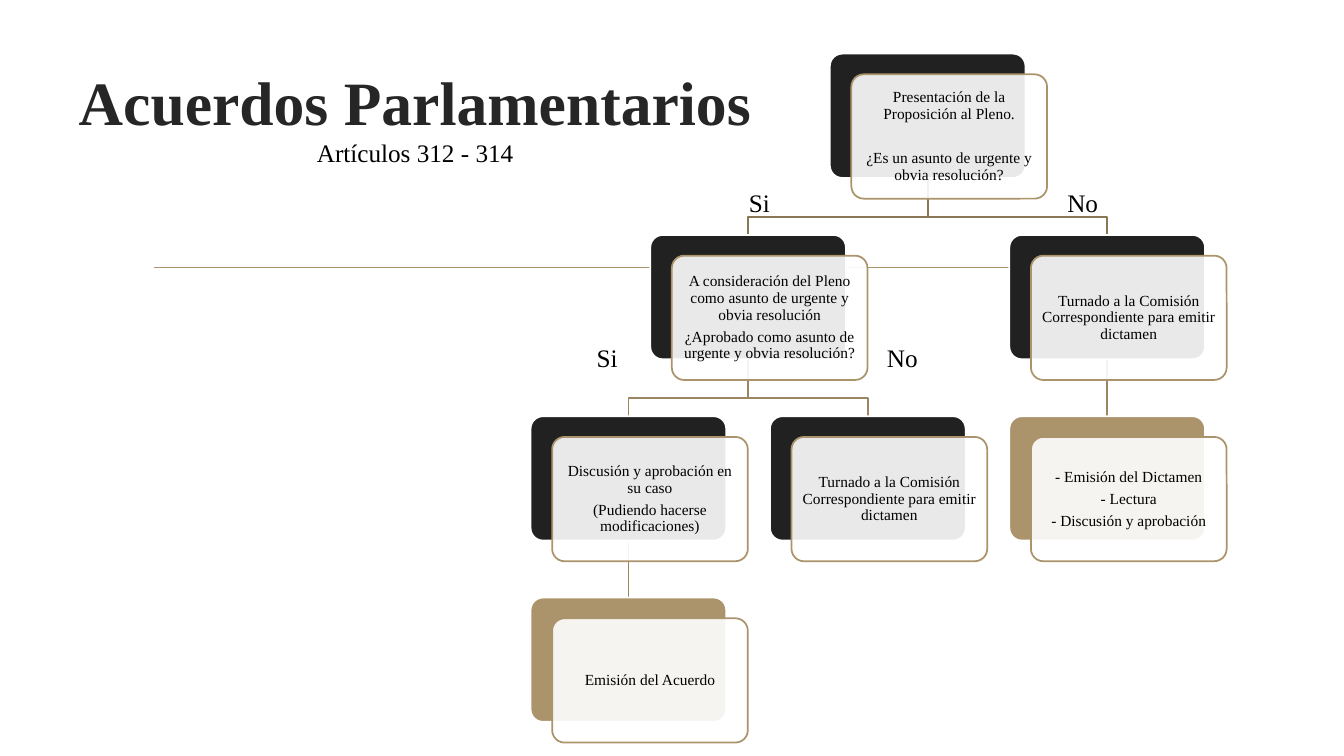
from lxml.etree import SubElement
from pptx import Presentation
from pptx.dml.color import RGBColor
from pptx.enum.shapes import MSO_CONNECTOR as CONNECTOR, MSO_SHAPE as SHAPE
from pptx.enum.text import MSO_ANCHOR as ANCHOR, PP_ALIGN as ALIGN
from pptx.oxml.ns import qn
from pptx.util import Pt

COLORS = {
    "black": "000000", "title": "262626", "white": "FFFFFF", "dark": "212121",
    "gold": "AB946B", "branch_top": "897756", "branch": "9B8661",
}
FONT = "Times New Roman"
LINE_WIDTH = Pt(1.25)
CARD_WIDTH, CARD_HEIGHT = 139.8, 88.8
FRONT_SHIFT_X, FRONT_SHIFT_Y = 15.4, 14.8
FIRST_LEFT, FIRST_TOP = 379, 38.3
COLUMN_STEP, ROW_STEP = 85.5, 129.5
ELBOW_RISE = 13


def write(shape, lines, size=11, color="black", bold=False, align=ALIGN.CENTER,
          anchor=ANCHOR.MIDDLE, spacing=1.0, after=0, inset=None):
    """Fill a shape with one formatted paragraph per line."""
    frame = shape.text_frame
    frame.word_wrap = True
    frame.vertical_anchor = anchor
    if inset is not None:
        frame.margin_left = frame.margin_right = Pt(inset)
        frame.margin_top = frame.margin_bottom = Pt(inset)
    for index, line in enumerate(lines):
        paragraph = frame.paragraphs[0] if index == 0 else frame.add_paragraph()
        paragraph.alignment = align
        paragraph.line_spacing = spacing
        paragraph.space_after = Pt(after)
        run = paragraph.add_run()
        run.text = line
        run.font.name = FONT
        run.font.size = Pt(size)
        run.font.bold = bold
        run.font.color.rgb = RGBColor.from_string(COLORS[color])
    return frame


def add_line(points, color):
    """Draw a straight or bent line through points given in pt."""
    if len(points) == 2:
        (x1, y1), (x2, y2) = points
        line = slide.shapes.add_connector(
            CONNECTOR.STRAIGHT, Pt(x1), Pt(y1), Pt(x2), Pt(y2))
        SubElement(line._element.spPr, qn("a:effectLst"))
    else:
        corners = [(Pt(x), Pt(y)) for x, y in points]
        builder = slide.shapes.build_freeform(*corners[0])
        builder.add_line_segments(corners[1:], close=False)
        line = builder.convert_to_shape()
        line.fill.background()
        line.shadow.inherit = False
    line.line.color.rgb = RGBColor.from_string(COLORS[color])
    line.line.width = LINE_WIDTH


presentation = Presentation()
presentation.slide_width, presentation.slide_height = Pt(960), Pt(540)
slide = presentation.slides.add_slide(presentation.slide_layouts[6])

# Rule and title
add_line([(110.2, 191), (850.3, 191)], "gold")
title = slide.shapes.add_textbox(Pt(-81.4), Pt(31), Pt(756), Pt(103))
title_frame = write(title, ["Acuerdos Parlamentarios", "Artículos 312 - 314"],
                    size=44, color="title", bold=True)
subtitle_font = title_frame.paragraphs[1].runs[0].font
subtitle_font.size = Pt(18)
subtitle_font.bold = False
subtitle_font.color.rgb = RGBColor.from_string(COLORS["black"])

# Steps of the procedure: column, row, back card colour, lines
referral = ["Turnado a la Comisión Correspondiente para emitir dictamen"]
steps = {
    "proposal": (2.5, 0, "dark", ["Presentación de la Proposición al Pleno.",
                                  "¿Es un asunto de urgente y obvia resolución?"]),
    "plenary": (1, 1, "dark", [
        "A consideración del Pleno como asunto de urgente y obvia resolución",
        "¿Aprobado como asunto de urgente y obvia resolución?"]),
    "discussion": (0, 2, "dark", ["Discusión y aprobación en su caso",
                                  "(Pudiendo hacerse modificaciones)"]),
    "agreement": (0, 3, "gold", ["Emisión del Acuerdo"]),
    "late_referral": (2, 2, "dark", referral),
    "referral": (4, 1, "dark", referral),
    "ruling": (4, 2, "gold", ["- Emisión del Dictamen", "- Lectura",
                              "- Discusión y aprobación"]),
}
branches = [
    ("referral", "ruling"), ("proposal", "referral"), ("plenary", "late_referral"),
    ("discussion", "agreement"), ("plenary", "discussion"), ("proposal", "plenary"),
]
corner = {name: (FIRST_LEFT + column * COLUMN_STEP, FIRST_TOP + row * ROW_STEP)
          for name, (column, row, _, _) in steps.items()}

for parent, child in branches:
    start_x, end_x = (corner[name][0] + CARD_WIDTH / 2 for name in (parent, child))
    start_y, end_y = corner[parent][1] + CARD_HEIGHT, corner[child][1]
    elbow_y = end_y - ELBOW_RISE
    bend = [] if start_x == end_x else [(start_x, elbow_y), (end_x, elbow_y)]
    add_line([(start_x, start_y), *bend, (end_x, end_y)],
             "branch_top" if parent == "proposal" else "branch")

for name, (_, _, back_color, lines) in steps.items():
    left, top = corner[name]
    for shift_x, shift_y, fill, outline in (
            (0, 0, back_color, "white"),
            (FRONT_SHIFT_X, FRONT_SHIFT_Y, "white", "gold")):
        card = slide.shapes.add_shape(
            SHAPE.ROUNDED_RECTANGLE, Pt(left + shift_x), Pt(top + shift_y),
            Pt(CARD_WIDTH), Pt(CARD_HEIGHT))
        card.adjustments[0] = 0.1
        card.shadow.inherit = False
        card.fill.solid()
        card.fill.fore_color.rgb = RGBColor.from_string(COLORS[fill])
        card.line.color.rgb = RGBColor.from_string(COLORS[outline])
        card.line.width = LINE_WIDTH
    # The front card lets a little of the back card through
    front_color = card._element.spPr.find(qn("a:solidFill"))[0]
    SubElement(front_color, qn("a:alpha"), val="90000")
    frame = write(card, lines, spacing=0.9, after=3.85, inset=3.6)
    if name == "proposal":
        frame.paragraphs[0].space_after = Pt(19.5)

# Answers beside the branches
for answer, left, top, width in (
        ("Si", 527.8, 130.3, 38), ("No", 755.3, 130.3, 48),
        ("Si", 419, 241.2, 38), ("No", 626.4, 241.2, 48)):
    label = slide.shapes.add_textbox(Pt(left), Pt(top), Pt(width), Pt(29))
    write(label, [answer], size=18, align=ALIGN.LEFT, anchor=ANCHOR.TOP)

presentation.save("out.pptx")
